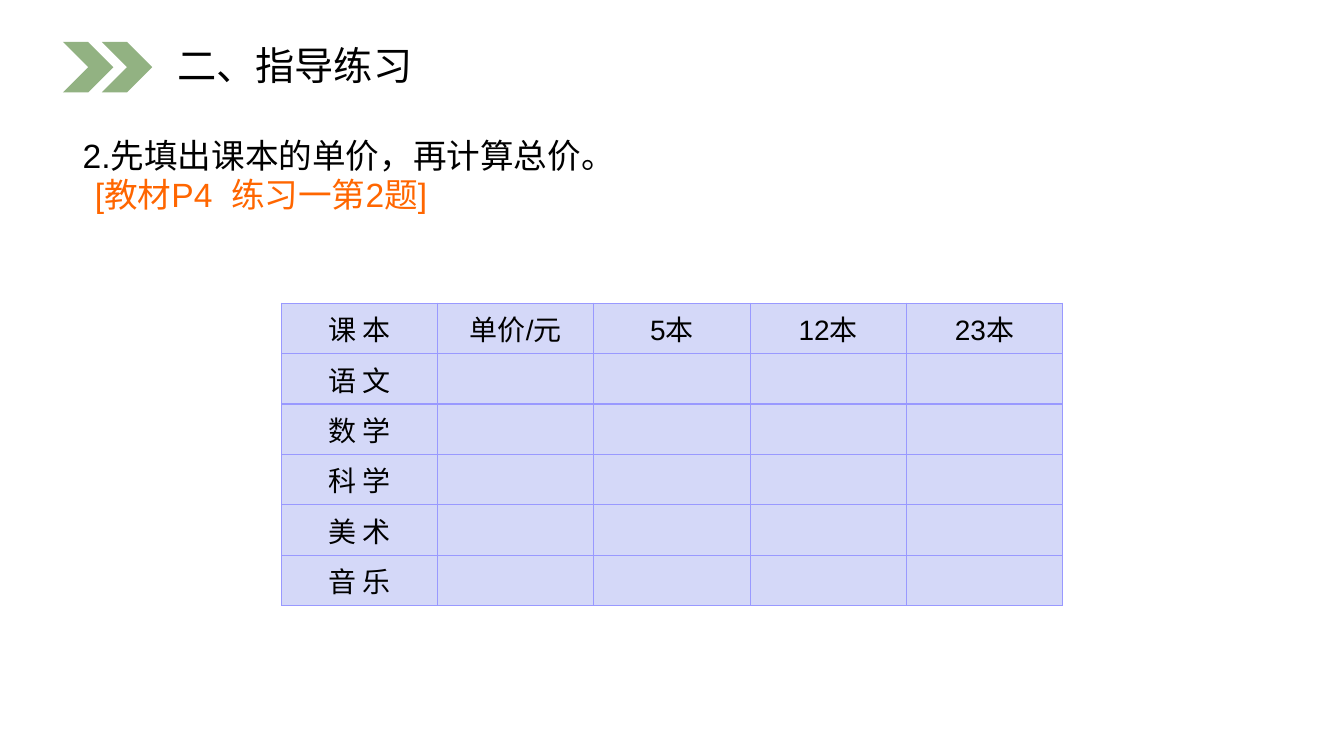
from dataclasses import dataclass

from lxml.etree import SubElement
from pptx import Presentation
from pptx.dml.color import RGBColor
from pptx.enum.shapes import MSO_SHAPE
from pptx.enum.text import MSO_ANCHOR, MSO_AUTO_SIZE, PP_ALIGN
from pptx.oxml.ns import qn
from pptx.util import Pt


@dataclass(frozen=True)
class Theme:
    font: str = "Arial"
    ink: str = "000000"
    accent: str = "FF6600"
    chevron: str = "92B282"
    cell: str = "D4D8F8"
    border: str = "9999FF"
    title_size: int = 28
    body_size: int = 24
    table_size: int = 20


THEME = Theme()
HEADINGS = ["课 本", "单价/元", "5本", "12本", "23本"]
SUBJECTS = ["语 文", "数 学", "科 学", "美 术", "音 乐"]


def write_text(frame, text, size=THEME.body_size, color=THEME.ink,
               align=PP_ALIGN.LEFT, line_spacing=None):
    paragraph = frame.paragraphs[0]
    paragraph.alignment = align
    paragraph.line_spacing = line_spacing
    run = paragraph.add_run()
    run.text = text
    run.font.name = THEME.font
    run.font.size = Pt(size)
    run.font.bold = False
    run.font.color.rgb = RGBColor.from_string(color)


def add_title(slide, text):
    title = slide.shapes.title
    title.left, title.top = Pt(119.5), Pt(31.7)
    title.width, title.height = Pt(402.5), Pt(33.1)
    frame = title.text_frame
    frame.word_wrap = True
    frame.auto_size = MSO_AUTO_SIZE.NONE
    frame.vertical_anchor = MSO_ANCHOR.MIDDLE
    write_text(frame, text, size=THEME.title_size, line_spacing=0.9)


def add_chevron(slide, left):
    shape = slide.shapes.add_shape(MSO_SHAPE.CHEVRON, Pt(left), Pt(30), Pt(36), Pt(36))
    shape.shadow.inherit = False
    shape.fill.solid()
    shape.fill.fore_color.rgb = RGBColor.from_string(THEME.chevron)
    shape.line.fill.background()


def add_text_box(slide, text, left, top, width, **text_format):
    frame = slide.shapes.add_textbox(Pt(left), Pt(top), Pt(width), Pt(36)).text_frame
    frame.word_wrap = True
    frame.auto_size = MSO_AUTO_SIZE.SHAPE_TO_FIT_TEXT
    write_text(frame, text, **text_format)


def format_cell(cell):
    properties = cell._tc.get_or_add_tcPr()
    for side in ("a:lnL", "a:lnR", "a:lnT", "a:lnB"):
        line = SubElement(properties, qn(side), w=str(Pt(1)))
        fill = SubElement(line, qn("a:solidFill"))
        SubElement(fill, qn("a:srgbClr"), val=THEME.border)
    cell.fill.solid()
    cell.fill.fore_color.rgb = RGBColor.from_string(THEME.cell)
    cell.vertical_anchor = MSO_ANCHOR.MIDDLE


def add_price_table(slide, left, top, column_width, row_height):
    rows = [HEADINGS] + [[subject] + [""] * (len(HEADINGS) - 1) for subject in SUBJECTS]
    table = slide.shapes.add_table(
        len(rows), len(HEADINGS), Pt(left), Pt(top),
        Pt(column_width * len(HEADINGS)), Pt(row_height * len(rows))).table
    table.first_row = False
    table.horz_banding = False
    for column in table.columns:
        column.width = Pt(column_width)
    for row, texts in zip(table.rows, rows):
        row.height = Pt(row_height)
        for cell, text in zip(row.cells, texts):
            format_cell(cell)
            if text:
                write_text(cell.text_frame, text, size=THEME.table_size,
                           align=PP_ALIGN.CENTER)


def main():
    presentation = Presentation()
    presentation.slide_width, presentation.slide_height = Pt(960), Pt(540)
    slide = presentation.slides.add_slide(presentation.slide_layouts[5])
    for left in (45, 72.7):
        add_chevron(slide, left)
    add_title(slide, "二、指导练习")
    add_text_box(slide, "2.先填出课本的单价，再计算总价。", 52, 93, 616)
    add_text_box(slide, "[教材P4  练习一第2题]", 60.5, 121, 252,
                 color=THEME.accent, align=PP_ALIGN.CENTER)
    add_price_table(slide, 201, 216.5, column_width=111.6, row_height=36)
    presentation.save("out.pptx")


if __name__ == "__main__":
    main()
